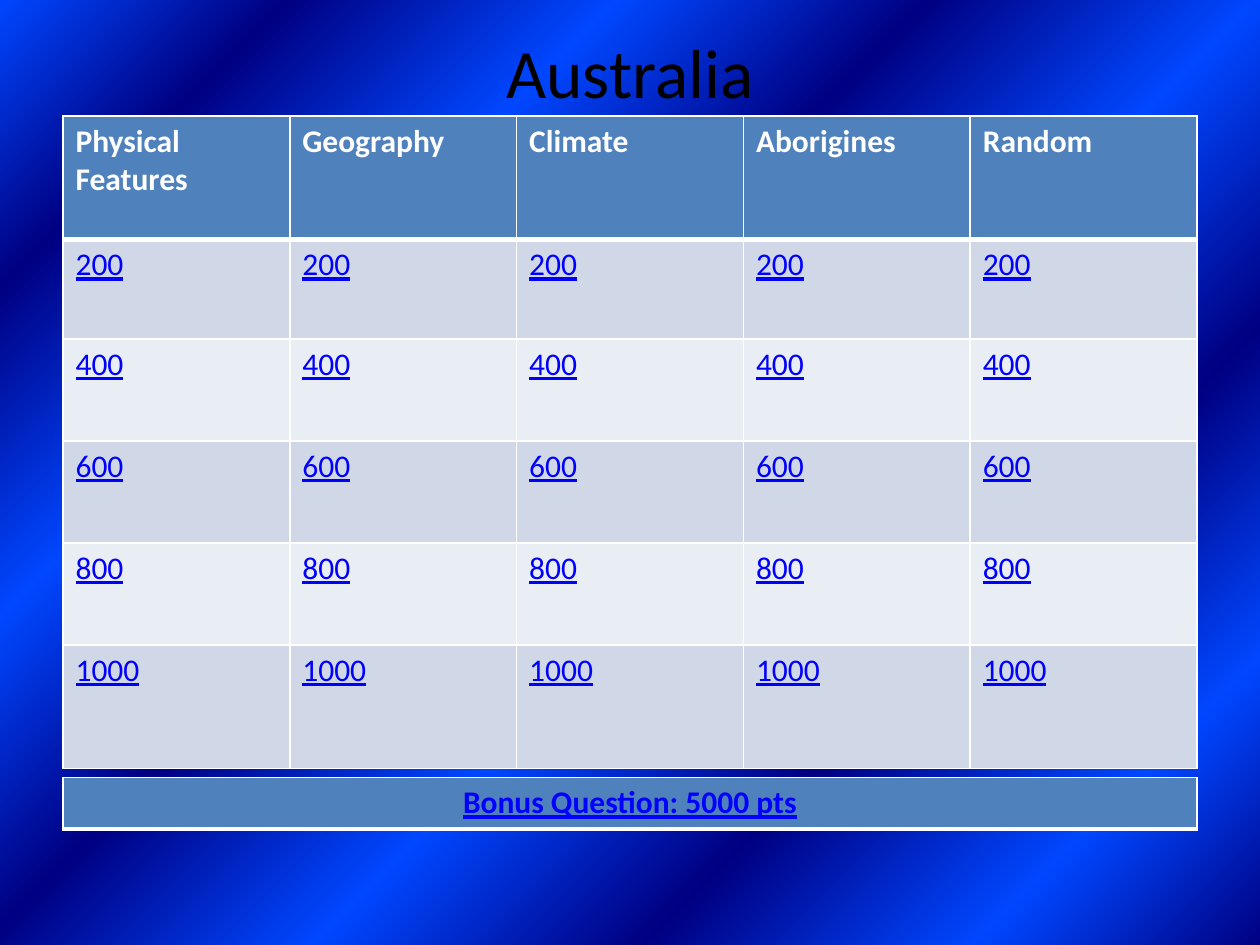
from pptx import Presentation
from pptx.dml.color import RGBColor as Rgb
from pptx.enum.text import MSO_VERTICAL_ANCHOR as Anchor, PP_PARAGRAPH_ALIGNMENT as Align
from pptx.oxml import parse_xml
from pptx.oxml.ns import nsdecls
from pptx.util import Pt

SCALE = 9144  # EMU per px, 100 px to the inch
COLORS = {
    "navy": "000082",
    "bright": "0047FF",
    "header": "4F81BD",
    "odd": "D0D8E8",
    "even": "E9EDF4",
    "border": "FFFFFF",
    "title": "000000",
    "heading": "FFFFFF",
    "link": "0000FF",
}
TOPICS = ["Physical\nFeatures", "Geography", "Climate", "Aborigines", "Random"]
POINTS = [200, 400, 600, 800, 1000]
ROW_HEIGHTS = [98, 79, 81, 81, 81, 98]
STOPS = [0, 13, 28, 43, 58, 72, 87, 100]


def px(length):
    return length * SCALE


def write(frame, text, size=18, color="title", bold=False, underline=False, align=Align.LEFT):
    """Fill a text frame, one paragraph for each line of text."""
    frame.text = text
    for para in frame.paragraphs:
        para.alignment = align
        for span in para.runs:
            font = span.font
            font.name, font.size = "Calibri", Pt(size)
            font.bold, font.underline = bold, underline
            font.color.rgb = Rgb.from_string(COLORS[color])


class Board:
    def __init__(self, page, font_size=18):
        self.page = page
        self.font_size = font_size

    def background(self, stops):
        """Alternate navy and bright bands, spreading from the bottom right corner."""
        bands = "".join(
            f'<a:gs pos="{stop * 1000}"><a:srgbClr val="{COLORS[("navy", "bright")[i % 2]]}"/></a:gs>'
            for i, stop in enumerate(stops)
        )
        self.page.element.cSld.insert(0, parse_xml(
            f'<p:bg {nsdecls("p", "a")}><p:bgPr><a:gradFill rotWithShape="1">'
            f'<a:gsLst>{bands}</a:gsLst><a:path path="circle">'
            '<a:fillToRect l="100000" t="100000"/></a:path>'
            '<a:tileRect r="-100000" b="-100000"/></a:gradFill>'
            '<a:effectLst/></p:bgPr></p:bg>'
        ))

    def title(self, text, left, top, width, height):
        box = self.page.shapes.add_textbox(px(left), px(top), px(width), px(height))
        frame = box.text_frame
        frame.word_wrap = True
        frame.vertical_anchor = Anchor.MIDDLE
        write(frame, text, size=39.6, align=Align.CENTER)

    def table(self, rows, left, top, width, heights, **header_format):
        """Header row first, then striped rows of underlined values."""
        grid = self.page.shapes.add_table(
            len(rows), len(rows[0]), px(left), px(top), px(width), px(sum(heights))
        ).table
        for r, (values, height) in enumerate(zip(rows, heights)):
            grid.rows[r].height = px(height)
            for c, value in enumerate(values):
                cell = grid.cell(r, c)
                if r == 0:
                    fill, style = "header", {"bold": True, **header_format}
                else:
                    fill = "odd" if r % 2 else "even"
                    style = {"color": "link", "underline": True}
                write(cell.text_frame, str(value), size=self.font_size, **style)
                cell.fill.solid()
                cell.fill.fore_color.rgb = Rgb.from_string(COLORS[fill])
                self.borders(cell, top=3 if r == 1 else 1, bottom=3 if r == 0 else 1)

    def borders(self, cell, top, bottom):
        properties = cell._tc.get_or_add_tcPr()
        sides = {"L": 1, "R": 1, "T": top, "B": bottom}
        for index, (side, width) in enumerate(sides.items()):
            properties.insert(index, parse_xml(
                f'<a:ln{side} {nsdecls("a")} w="{Pt(width)}"><a:solidFill>'
                f'<a:srgbClr val="{COLORS["border"]}"/></a:solidFill></a:ln{side}>'
            ))


def main():
    deck = Presentation()
    deck.slide_width, deck.slide_height = px(1000), px(750)
    board = Board(deck.slides.add_slide(deck.slide_layouts[6]))
    board.background(STOPS)
    board.title("Australia", 50, 30, 900, 53)
    rows = [TOPICS] + [[points] * len(TOPICS) for points in POINTS]
    board.table(rows, 50, 92, 900, ROW_HEIGHTS, color="heading")
    board.table([["Bonus Question: 5000 pts"]], 50, 617, 900, [41],
                color="link", underline=True, align=Align.CENTER)
    deck.save("out.pptx")


if __name__ == "__main__":
    main()
